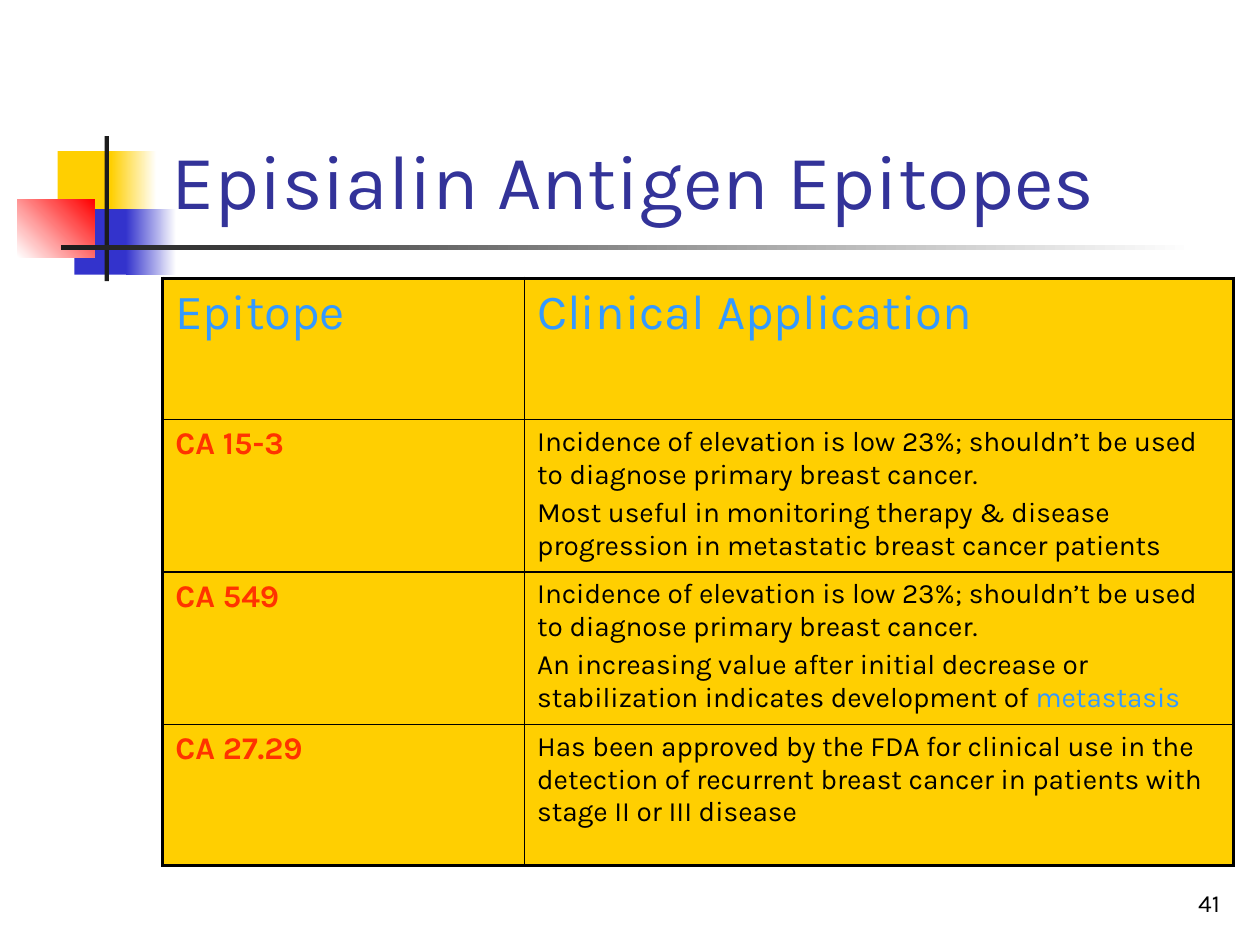
from lxml.etree import SubElement
from pptx import Presentation
from pptx.dml.color import RGBColor
from pptx.enum.shapes import MSO_SHAPE as Preset
from pptx.enum.text import MSO_ANCHOR as Anchor, PP_ALIGN as Align
from pptx.oxml.ns import qn
from pptx.util import Pt

FONT = "Karla"
COLORS = {
    "yellow": "FFCF01", "blue": "3333CC", "red": "FF0000", "white": "FFFFFF",
    "charcoal": "1C1C1C", "black": "000000", "title": "333399",
    "heading": "3399FF", "epitope": "FF3300",
}
THICK, THIN = 2.25, 1

# left, top, width, height, colours (two make a gradient), gradient angle
ORNAMENTS = [
    (33, 86.4, 35, 37.4, ["yellow"], 0),
    (63.4, 86.4, 26, 37.4, ["yellow", "white"], 0),
    (42.5, 119.5, 33, 37.4, ["blue"], 0),
    (72, 119.5, 28.8, 37.4, ["blue", "white"], 0),
    (10, 113.8, 44, 33.1, ["white", "red"], 45),
    (59.8, 77.8, 2.5, 82.8, ["charcoal"], 0),
    (34.6, 140.2, 648, 2.5, ["charcoal", "white"], 0),
]

LOW_INCIDENCE = ("Incidence of elevation is low 23%; shouldn’t be used "
                 "to diagnose primary breast cancer.")
# Each application is a list of paragraphs, each a list of (text, colour) spans.
EPITOPES = [
    ("CA 15-3", [
        [(LOW_INCIDENCE, "black")],
        [("Most useful in monitoring therapy & disease progression "
          "in metastatic breast cancer patients", "black")],
    ]),
    ("CA 549", [
        [(LOW_INCIDENCE, "black")],
        [("An increasing value after initial decrease or stabilization "
          "indicates development of ", "black"), ("metastasis", "heading")],
    ]),
    ("CA 27.29", [
        [("Has been approved by the FDA for clinical use in the detection of "
          "recurrent breast cancer in patients with stage II or III disease", "black")],
    ]),
]


def rgb(name):
    return RGBColor.from_string(COLORS[name])


def add_span(para, text, *, size, color, bold=False):
    span = para.add_run()
    span.text = text
    span.font.name = FONT
    span.font.size = Pt(size)
    span.font.bold = bold
    span.font.color.rgb = rgb(color)


def add_ornament(page, left, top, width, height, colors, angle):
    shape = page.shapes.add_shape(Preset.RECTANGLE, Pt(left), Pt(top), Pt(width), Pt(height))
    shape.shadow.inherit = False
    shape.line.fill.background()
    if len(colors) == 1:
        shape.fill.solid()
        shape.fill.fore_color.rgb = rgb(colors[0])
    else:
        shape.fill.gradient()
        shape.fill.gradient_angle = angle
        for stop, color, position in zip(shape.fill.gradient_stops, colors, (0, 1)):
            stop.color.rgb = rgb(color)
            stop.position = position


def add_text(page, left, top, width, height, text, *, align=Align.LEFT, **style):
    box = page.shapes.add_textbox(Pt(left), Pt(top), Pt(width), Pt(height))
    frame = box.text_frame
    frame.word_wrap = True
    frame.vertical_anchor = Anchor.BOTTOM
    para = frame.paragraphs[0]
    para.alignment = align
    add_span(para, text, **style)


def set_borders(cell, widths):
    """Draw black borders, given widths for left, right, top and bottom."""
    properties = cell._tc.get_or_add_tcPr()
    for index, (side, width) in enumerate(zip(("lnL", "lnR", "lnT", "lnB"), widths)):
        line = properties.makeelement(qn(f"a:{side}"), {"w": str(int(Pt(width)))})
        fill = SubElement(line, qn("a:solidFill"))
        SubElement(fill, qn("a:srgbClr"), val=COLORS["black"])
        properties.insert(index, line)


def fill_cell(cell, paragraphs, *, size, bold=False):
    cell.fill.solid()
    cell.fill.fore_color.rgb = rgb("yellow")
    frame = cell.text_frame
    for index, spans in enumerate(paragraphs):
        para = frame.add_paragraph() if index else frame.paragraphs[0]
        if index:
            para.space_before = Pt(0.2 * size)
        for text, color in spans:
            add_span(para, text, size=size, color=color, bold=bold)


def add_epitope_table(page):
    last = len(EPITOPES)
    row_height, column_widths = 80.7, (206.8, 405.2)
    table = page.shapes.add_table(
        last + 1, 2, Pt(93), Pt(159), Pt(sum(column_widths)), Pt(row_height * (last + 1))
    ).table
    table.first_row = table.horz_banding = False
    for column, width in zip(table.columns, column_widths):
        column.width = Pt(width)
    for row in table.rows:
        row.height = Pt(row_height)

    for index, heading in enumerate(("Epitope", "Clinical Application")):
        fill_cell(table.cell(0, index), [[(heading, "heading")]], size=28)
    for index, (epitope, application) in enumerate(EPITOPES, start=1):
        fill_cell(table.cell(index, 0), [[(epitope, "epitope")]], size=18, bold=True)
        fill_cell(table.cell(index, 1), application, size=16)

    for row in range(last + 1):
        for column in range(2):
            outer = (column == 0, column == 1, row == 0, row == last)
            set_borders(table.cell(row, column), [THICK if edge else THIN for edge in outer])


def main():
    deck = Presentation()
    deck.slide_width, deck.slide_height = Pt(720), Pt(540)
    page = deck.slides.add_slide(deck.slide_layouts[6])
    for ornament in ORNAMENTS:
        add_ornament(page, *ornament)
    add_text(page, 554.4, 491.8, 149.8, 36, "41", align=Align.RIGHT, size=14, color="black")
    add_text(page, 90.7, 16.6, 613.4, 115.2, "Episialin Antigen Epitopes", size=44, color="title")
    add_epitope_table(page)
    deck.save("out.pptx")


if __name__ == "__main__":
    main()
